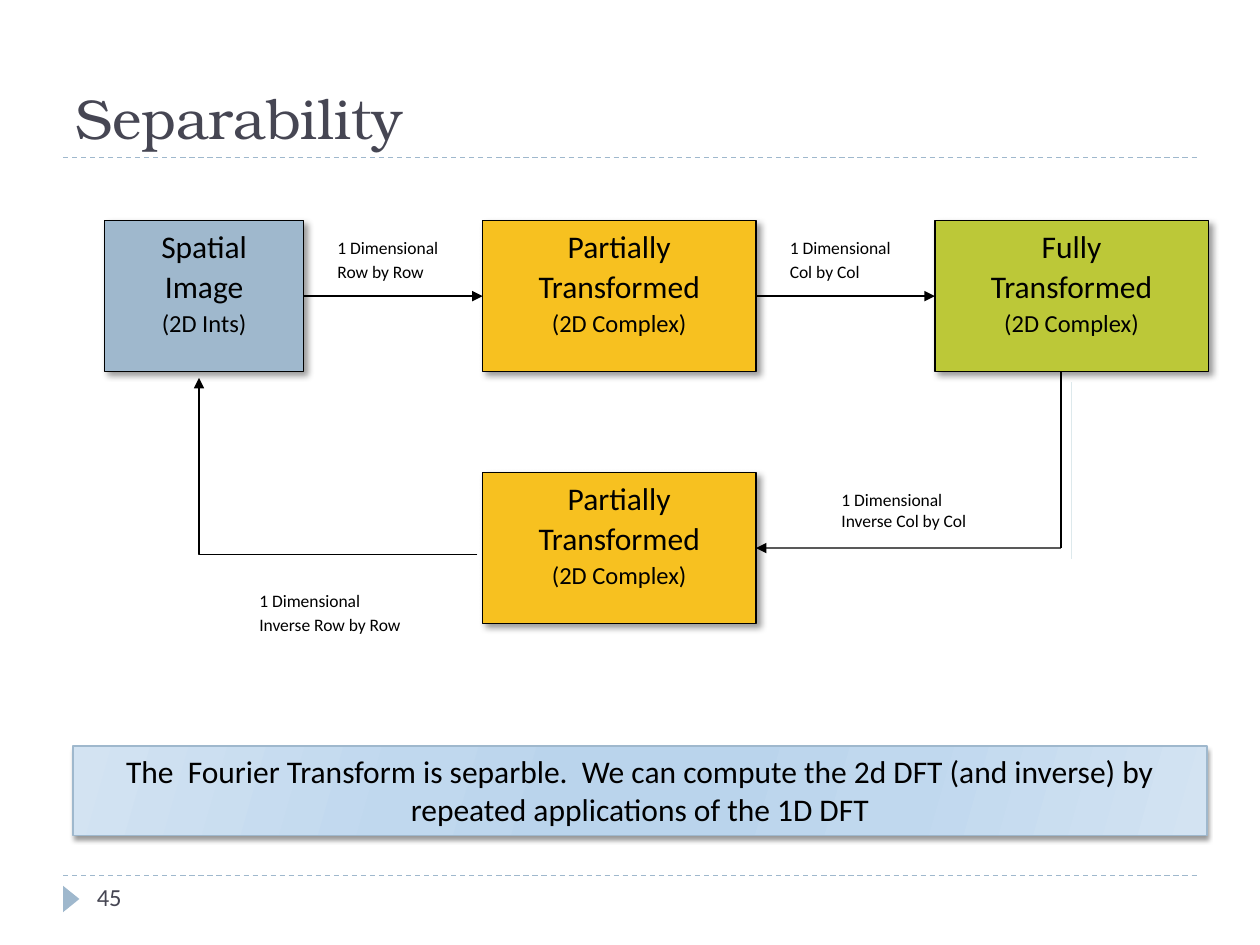
import pptx
import pptx.util
import pptx.dml.color
import pptx.enum.dml
import pptx.enum.shapes
import pptx.enum.text
import pptx.oxml
import pptx.oxml.ns

Inches, Pt = pptx.util.Inches, pptx.util.Pt
Shape = pptx.enum.shapes.MSO_SHAPE
Link = pptx.enum.shapes.MSO_CONNECTOR
Align = pptx.enum.text.PP_ALIGN
Anchor = pptx.enum.text.MSO_ANCHOR
DASH = pptx.enum.dml.MSO_LINE.DASH
NS = pptx.oxml.ns.nsdecls("a")

BLUE, GOLD, GREEN = "9FB8CD", "F7C120", "BCC838"
BLACK, SLATE = "000000", "464653"
TITLE = "Separability"
PAGE = "45"
NOTE = ("The  Fourier Transform is separble.  We can compute the 2d DFT "
        "(and inverse) by repeated applications of the 1D DFT")
HALF = ["Partially", "Transformed", "(2D Complex)"]
BOX_H = 1.2
# name: (left, top, width, fill, lines)
BOXES = {
    "image": (0.83, 1.75, 1.58, BLUE, ["Spatial", "Image", "(2D Ints)"]),
    "rows": (3.83, 1.75, 2.17, GOLD, HALF),
    "full": (7.42, 1.75, 2.17, GREEN, ["Fully", "Transformed", "(2D Complex)"]),
    "back": (3.83, 3.75, 2.17, GOLD, HALF),
}
# left, top, width, height, lines
LABELS = [
    (2.58, 1.83, 1.14, 0.47, ["1 Dimensional", "Row by Row"]),
    (6.17, 1.83, 1.14, 0.47, ["1 Dimensional", "Col by Col"]),
    (6.58, 3.83, 1.42, 0.43, ["1 Dimensional Inverse Col by Col"]),
    (1.96, 4.63, 1.50, 0.47, ["1 Dimensional", "Inverse Row by Row"]),
]
STEPS = [("image", "rows"), ("rows", "full")]
STOPS = [(0, "D3E3F2"), (30, "C0D8EE"), (45, "BAD4EC"),
         (55, "BAD4EC"), (73, "C0D8EE"), (100, "D3E3F2")]
RULES = [1.25, 6.95]
TURN_X = 8.42


def rgb(code):
    return pptx.dml.color.RGBColor.from_string(code)


def node(xml):
    """Parse an element whose root lacks the drawing namespace."""
    head, rest = xml.split(" ", 1)
    return pptx.oxml.parse_xml(f"{head} {NS} {rest}")


def write(shape, lines, sizes, font="Calibri", color=BLACK, align=Align.LEFT,
          anchor=Anchor.TOP, gap=0):
    """Fill a shape with one paragraph per line; the last size repeats."""
    frame = shape.text_frame
    frame.word_wrap = True
    frame.vertical_anchor = anchor
    for i, line in enumerate(lines):
        para = frame.paragraphs[0] if i == 0 else frame.add_paragraph()
        para.alignment = align
        if i:
            para.space_before = Pt(gap)
        run = para.add_run()
        run.text = line
        run.font.size = Pt(sizes[min(i, len(sizes) - 1)])
        run.font.name = font
        run.font.color.rgb = rgb(color)


def shadow(shape, color, alpha, blur, dist, angle):
    shape.shadow.inherit = False
    effects = shape._element.spPr.find(pptx.oxml.ns.qn("a:effectLst"))
    effects.append(node(
        f'<a:outerShdw blurRad="{Pt(blur)}" dist="{Pt(dist)}" '
        f'dir="{angle * 60000}" algn="tl" rotWithShape="0">'
        f'<a:srgbClr val="{color}"><a:alpha val="{alpha * 1000}"/>'
        '</a:srgbClr></a:outerShdw>'))


def block(slide, kind, area, fill, line=None):
    shape = slide.shapes.add_shape(kind, *map(Inches, area))
    shape.fill.solid()
    shape.fill.fore_color.rgb = rgb(fill)
    if line:
        shape.line.color.rgb = rgb(line)
        shape.line.width = Pt(0.75)
    else:
        shape.line.fill.background()
    shape.shadow.inherit = False
    return shape


def label(slide, area, lines, size, **form):
    write(slide.shapes.add_textbox(*map(Inches, area)), lines, [size], **form)


def wire(slide, start, end, color=BLACK, arrow=True, kind=Link.STRAIGHT):
    line = slide.shapes.add_connector(kind, *map(Inches, start + end))
    line.line.color.rgb = rgb(color)
    line.line.width = Pt(0.75)
    if arrow:
        line.line._get_or_add_ln().append(node('<a:tailEnd type="triangle"/>'))
    line._element.spPr.append(node("<a:effectLst />"))
    return line


def banner(slide):
    shape = block(slide, Shape.RECTANGLE, (0.58, 5.92, 9, 0.71), BLUE, BLUE)
    stops = "".join(f'<a:gs pos="{at * 1000}"><a:srgbClr val="{color}"/></a:gs>'
                    for at, color in STOPS)
    props = shape._element.spPr
    props.replace(props.find(pptx.oxml.ns.qn("a:solidFill")), node(
        f'<a:gradFill rotWithShape="1"><a:gsLst>{stops}</a:gsLst>'
        f'<a:lin ang="{16 * 60000}" scaled="0"/></a:gradFill>'))
    shadow(shape, BLACK, 40, 3, 2, 90)
    write(shape, [NOTE], [18], align=Align.CENTER)


def frame(slide):
    """Place the title, the dashed rules and the page mark."""
    for y in RULES:
        rule = wire(slide, (0.5, y), (9.5, y), BLUE, arrow=False)
        rule.line.dash_style = DASH
    mark = block(slide, Shape.ISOSCELES_TRIANGLE, (0.46, 7.07, 0.21, 0.13), BLUE)
    mark.rotation = 90
    label(slide, (0.67, 6.95, 2.17, 0.4), [PAGE], 14, color=SLATE)
    title = slide.shapes.title
    title.left, title.top = Inches(0.5), Inches(0.17)
    title.width, title.height = Inches(9), Inches(1.08)
    write(title, [TITLE], [32], font="TeX Gyre Bonum", color=SLATE,
          anchor=Anchor.BOTTOM)


def flow(slide):
    made = {}
    for name, (x, y, w, fill, lines) in BOXES.items():
        box = block(slide, Shape.RECTANGLE, (x, y, w, BOX_H), fill, BLACK)
        shadow(box, BLACK, 40, 4, 3, 45)
        write(box, lines, [18, 18, 14], align=Align.CENTER, gap=1.7)
        made[name] = box
    for first, last in STEPS:
        line = wire(slide, (0, 0), (1, 0))
        line.begin_connect(made[first], 3)
        line.end_connect(made[last], 1)

    x, y, w = BOXES["back"][:3]
    mid = y + BOX_H / 2
    drop = wire(slide, (TURN_X, mid), (TURN_X, BOXES["full"][1] + BOX_H),
                arrow=False)
    shadow(drop, "DDE9EC", 100, 0, 8.5, 45) if hasattr(drop, "shadow") else None
    wire(slide, (TURN_X, mid), (x + w, mid)).end_connect(made["back"], 3)
    bend = wire(slide, (3.79, 4.4), (1.58, 3), kind=Link.ELBOW)
    bend._element.spPr.prstGeom.set("prst", "bentConnector2")

    for *area, lines in LABELS:
        label(slide, area, lines, 10, gap=2)


def main():
    deck = pptx.Presentation()
    deck.slide_width, deck.slide_height = Inches(10), Inches(7.5)
    slide = deck.slides.add_slide(deck.slide_layouts[5])
    frame(slide)
    flow(slide)
    banner(slide)
    deck.save("out.pptx")


if __name__ == "__main__":
    main()
